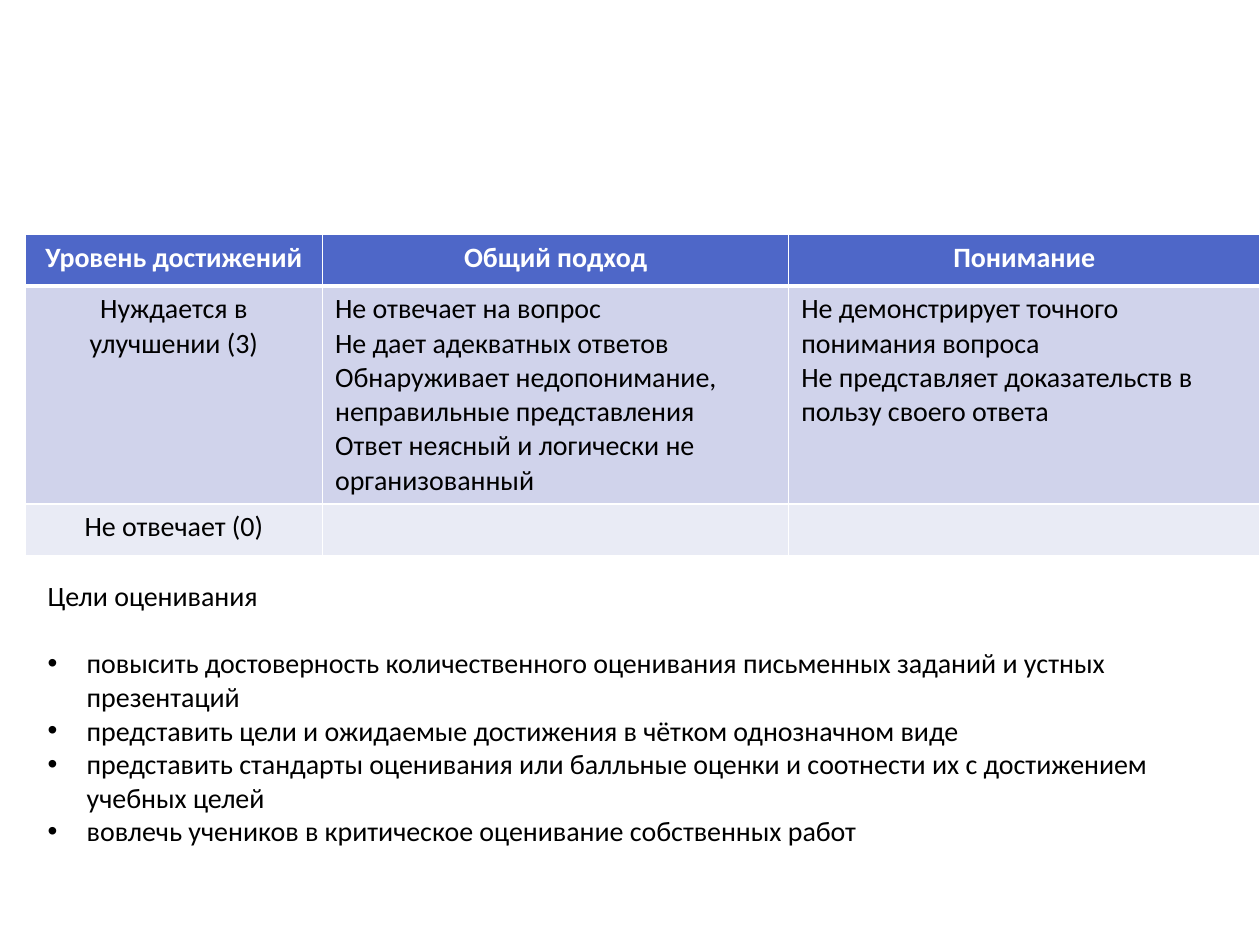
import pptx
import pptx.dml.color
import pptx.enum.text
import pptx.oxml
import pptx.oxml.ns
import pptx.util
from pptx.util import Inches

WHITE = pptx.dml.color.RGBColor(0xFF, 0xFF, 0xFF)
BLACK = pptx.dml.color.RGBColor(0x00, 0x00, 0x00)
HEADER_BLUE = pptx.dml.color.RGBColor(0x4E, 0x67, 0xC8)
BAND_DARK = pptx.dml.color.RGBColor(0xD0, 0xD3, 0xEB)
BAND_LIGHT = pptx.dml.color.RGBColor(0xE9, 0xEB, 0xF5)

CENTER = pptx.enum.text.PP_ALIGN.CENTER
LEFT = pptx.enum.text.PP_ALIGN.LEFT

RUBRIC = [
    ["Уровень достижений", "Общий подход", "Понимание"],
    [
        "Нуждается в улучшении (3)",
        "Не отвечает на вопрос\n"
        "Не дает адекватных ответов\n"
        "Обнаруживает недопонимание, неправильные представления\n"
        "Ответ неясный и логически не организованный",
        "Не демонстрирует точного понимания вопроса\n"
        "Не представляет доказательств в пользу своего ответа",
    ],
    ["Не отвечает (0)", "", ""],
]
GOALS = [
    "повысить достоверность количественного оценивания письменных заданий и устных презентаций",
    "представить цели и ожидаемые достижения в чётком однозначном виде",
    "представить стандарты оценивания или балльные оценки и соотнести их с достижением учебных целей",
    "вовлечь учеников в критическое оценивание собственных работ",
]


class RubricSlide:
    font_name = "Calibri"
    font_size = pptx.util.Pt(16)
    line_height = pptx.util.Pt(19.5)
    bullet_indent = Inches(0.31)
    row_fills = [HEADER_BLUE, BAND_DARK, BAND_LIGHT]

    def __init__(self, presentation):
        self.slide = presentation.slides.add_slide(presentation.slide_layouts[6])

    def style(self, paragraph, color, bold=False):
        for font in [paragraph.font, *(run.font for run in paragraph.runs)]:
            font.name = self.font_name
            font.size = self.font_size
            font.bold = bold
            font.color.rgb = color

    def border(self, cell, side, points):
        width = pptx.util.Pt(points)
        cell_properties = cell._tc.get_or_add_tcPr()
        cell_properties.append(pptx.oxml.parse_xml(
            f'<a:ln{side} {pptx.oxml.ns.nsdecls("a")} w="{width}">'
            f'<a:solidFill><a:srgbClr val="{WHITE}"/></a:solidFill></a:ln{side}>'
        ))

    def table(self, rows, left, top, widths, heights):
        table = self.slide.shapes.add_table(
            len(rows), len(widths), left, top, sum(widths), sum(heights)
        ).table
        for column, width in zip(table.columns, widths):
            column.width = width
        for row, height in zip(table.rows, heights):
            row.height = height
        for row_index, texts in enumerate(rows):
            header = row_index == 0
            for column_index, text in enumerate(texts):
                cell = table.cell(row_index, column_index)
                cell.text_frame.text = text
                for side in "LRTB":
                    below_header = (row_index, side) in [(0, "B"), (1, "T")]
                    self.border(cell, side, 3 if below_header else 1)
                cell.fill.solid()
                cell.fill.fore_color.rgb = self.row_fills[row_index]
                for paragraph in cell.text_frame.paragraphs:
                    paragraph.alignment = CENTER if header or column_index == 0 else LEFT
                    self.style(paragraph, WHITE if header else BLACK, header)

    def bullet(self, paragraph):
        properties = paragraph._p.get_or_add_pPr()
        properties.set("marL", str(self.bullet_indent))
        properties.set("indent", str(-self.bullet_indent))
        for element in ('buFont {} typeface="Arial"', 'buChar {} char="•"'):
            properties.append(pptx.oxml.parse_xml(
                f"<a:{element.format(pptx.oxml.ns.nsdecls('a'))}/>"
            ))

    def bullet_list(self, heading, items, left, top, width, height):
        frame = self.slide.shapes.add_textbox(left, top, width, height).text_frame
        frame.word_wrap = True
        frame.auto_size = pptx.enum.text.MSO_AUTO_SIZE.SHAPE_TO_FIT_TEXT
        frame.text = "\n".join([heading, *items])
        title, *bullets = frame.paragraphs
        for paragraph in bullets:
            self.bullet(paragraph)
        bullets[0].space_before = self.line_height
        for paragraph in [title, *bullets]:
            self.style(paragraph, BLACK)


def main():
    presentation = pptx.Presentation()
    presentation.slide_width = Inches(10)
    presentation.slide_height = Inches(7.5)
    rubric = RubricSlide(presentation)
    rubric.table(
        RUBRIC, Inches(0.2), Inches(1.86),
        [Inches(width) for width in (2.36, 3.7, 3.74)],
        [Inches(height) for height in (0.41, 1.7, 0.41)],
    )
    rubric.bullet_list(
        "Цели оценивания", GOALS,
        Inches(0.28), Inches(4.54), Inches(9.61), Inches(2.52),
    )
    presentation.save("out.pptx")


if __name__ == "__main__":
    main()
